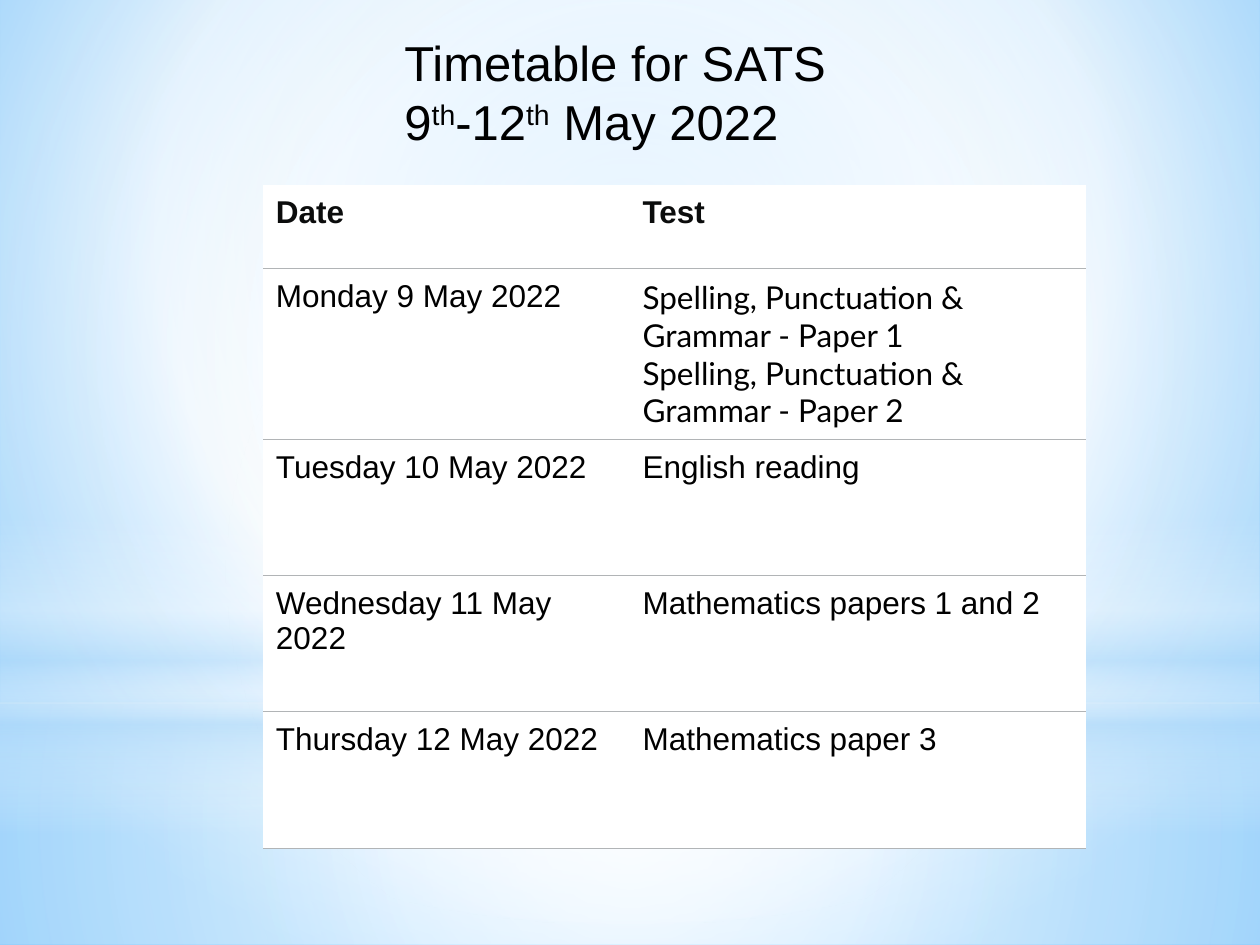
from lxml import etree
from pptx import Presentation
from pptx.dml.color import RGBColor
from pptx.enum.shapes import MSO_SHAPE
from pptx.enum.text import MSO_ANCHOR, MSO_AUTO_SIZE, PP_ALIGN
from pptx.oxml.ns import qn
from pptx.util import Inches, Pt

RECTANGLE, OVAL = MSO_SHAPE.RECTANGLE, MSO_SHAPE.OVAL
TOP, LEFT = MSO_ANCHOR.TOP, PP_ALIGN.LEFT
FIT_SHAPE = MSO_AUTO_SIZE.SHAPE_TO_FIT_TEXT

TITLE_ONLY = 5
NO_STYLE = "{2D5ABB26-0587-4C30-8999-92F81FD0307C}"
BLACK, HEADING, WHITE, RULE = "000000", "0B0C0C", "FFFFFF", "B1B4B6"
PALE_BLUE = "B4DCFA"
CENTRE = (50, 50, 50, 50)

TITLE = [
    [("Timetable for SATS", False)],
    [("9", False), ("th", True), ("-12", False), ("th", True), (" May 2022", False)],
]
TIMETABLE = [
    ("Date", "Test"),
    ("Monday 9 May 2022",
     "Spelling, Punctuation & Grammar - Paper 1\n"
     "Spelling, Punctuation & Grammar - Paper 2"),
    ("Tuesday 10 May 2022", "English reading"),
    ("Wednesday 11 May 2022", "Mathematics papers 1 and 2"),
    ("Thursday 12 May 2022", "Mathematics paper 3"),
]
COLUMN_WIDTHS = (2.91, 3.62)
ROW_HEIGHTS = (0.66, 0.66, 1.08, 1.08, 1.08)

# Kind, top, height, (position, colour, opacity) stops, focus rectangle
GLOWS = [
    (RECTANGLE, 5.58, 1.92,
     [(0, WHITE, 91), (37, WHITE, 76), (100, PALE_BLUE, 79)], CENTRE),
    (RECTANGLE, 0, 5.58,
     [(0, WHITE, 89), (48, WHITE, 62), (100, PALE_BLUE, 79)], CENTRE),
    (RECTANGLE, 4.12, 2.5,
     [(0, WHITE, 0), (29, WHITE, 30), (45, PALE_BLUE, 40), (55, WHITE, 26),
      (65, PALE_BLUE, 60), (100, WHITE, 0)], None),
    (OVAL, 1.75, 5.58, [(0, WHITE, 100), (56, WHITE, 0)], CENTRE),
]


def rgb(colour):
    return RGBColor.from_string(colour)


def child(parent, tag, **attributes):
    values = {name: str(value) for name, value in attributes.items()}
    return etree.SubElement(parent, qn(tag), values)


def set_gradient(fill, properties, stops, focus):
    """Fill with a circular gradient around focus, or a vertical one without it."""
    fill.background()
    gradient = etree.Element(qn("a:gradFill"), rotWithShape="1")
    stop_list = child(gradient, "a:gsLst")
    for position, colour, opacity in stops:
        stop = child(stop_list, "a:gs", pos=position * 1000)
        tint = child(stop, "a:srgbClr", val=colour)
        if opacity < 100:
            child(tint, "a:alpha", val=opacity * 1000)
    if focus:
        circle = child(gradient, "a:path", path="circle")
        edges = {side: inset * 1000 for side, inset in zip("ltrb", focus)}
        child(circle, "a:fillToRect", **edges)
    else:
        child(gradient, "a:lin", ang=90 * 60000, scaled=0)
    properties.replace(properties.find(qn("a:noFill")), gradient)


def paint_background(slide):
    stops = [(0, "9ED5FF", 100), (60, WHITE, 100), (100, "5BB9FF", 100)]
    fill = slide.background.fill
    fill.background()
    properties = slide.element.cSld.find(qn("p:bg")).find(qn("p:bgPr"))
    set_gradient(fill, properties, stops, (20, 10, 20, 60))


def add_glow(slide, kind, top, height, stops, focus):
    glow = slide.shapes.add_shape(kind, 0, Inches(top), Inches(10), Inches(height))
    glow.shadow.inherit = False
    glow.line.fill.background()
    set_gradient(glow.fill, glow.element.spPr, stops, focus)


def format_font(font, size, name, colour, bold=False):
    font.size, font.name, font.bold = Pt(size), name, bold
    font.color.rgb = rgb(colour)


def write_title(slide):
    title = slide.shapes.title
    title.left, title.top = Inches(3.11), Inches(0.21)
    title.width, title.height = Inches(3.59), Inches(1.04)
    frame = title.text_frame
    frame.word_wrap = False
    frame.auto_size = FIT_SHAPE
    frame.vertical_anchor = TOP
    frame.text = "\n".join("" for _ in TITLE)
    for paragraph, pieces in zip(frame.paragraphs, TITLE):
        paragraph.alignment = LEFT
        for text, raised in pieces:
            run = paragraph.add_run()
            run.text = text
            format_font(run.font, 28, "Arial", BLACK)
            if raised:
                run.font._element.set("baseline", "30000")
    # Bring the title in front of the background glows
    slide.shapes.element.append(title.element)


def add_bottom_rule(cell):
    properties = cell._tc.get_or_add_tcPr()
    rule = etree.Element(qn("a:lnB"), w=str(Pt(0.6)))
    child(child(rule, "a:solidFill"), "a:srgbClr", val=RULE)
    properties.insert(0, rule)


def fill_cell(cell, text, font_name, colour, bold):
    cell.fill.solid()
    cell.fill.fore_color.rgb = rgb(WHITE)
    cell.margin_left = Inches(0.1)
    cell.margin_top = cell.margin_right = cell.margin_bottom = Inches(0.08)
    cell.text_frame.text = text
    for paragraph in cell.text_frame.paragraphs:
        for run in paragraph.runs:
            format_font(run.font, 18, font_name, colour, bold)
    add_bottom_rule(cell)


def add_timetable(slide):
    frame = slide.shapes.add_table(
        len(TIMETABLE), len(COLUMN_WIDTHS), Inches(2.09), Inches(1.47),
        Inches(sum(COLUMN_WIDTHS)), Inches(sum(ROW_HEIGHTS)))
    table = frame.table
    table.horz_banding = False
    table._tbl.tblPr.find(qn("a:tableStyleId")).text = NO_STYLE
    for column, width in zip(table.columns, COLUMN_WIDTHS):
        column.width = Inches(width)
    for row, height, texts in zip(table.rows, ROW_HEIGHTS, TIMETABLE):
        row.height = Inches(height)
        is_header = texts == TIMETABLE[0]
        for cell, text in zip(row.cells, texts):
            font_name = "Lato" if text.startswith("Spelling") else "Arial"
            fill_cell(cell, text, font_name, HEADING if is_header else BLACK, is_header)


def main():
    presentation = Presentation()
    presentation.slide_width, presentation.slide_height = Inches(10), Inches(7.5)
    slide = presentation.slides.add_slide(presentation.slide_layouts[TITLE_ONLY])
    paint_background(slide)
    for glow in GLOWS:
        add_glow(slide, *glow)
    write_title(slide)
    add_timetable(slide)
    presentation.save("out.pptx")


if __name__ == "__main__":
    main()
